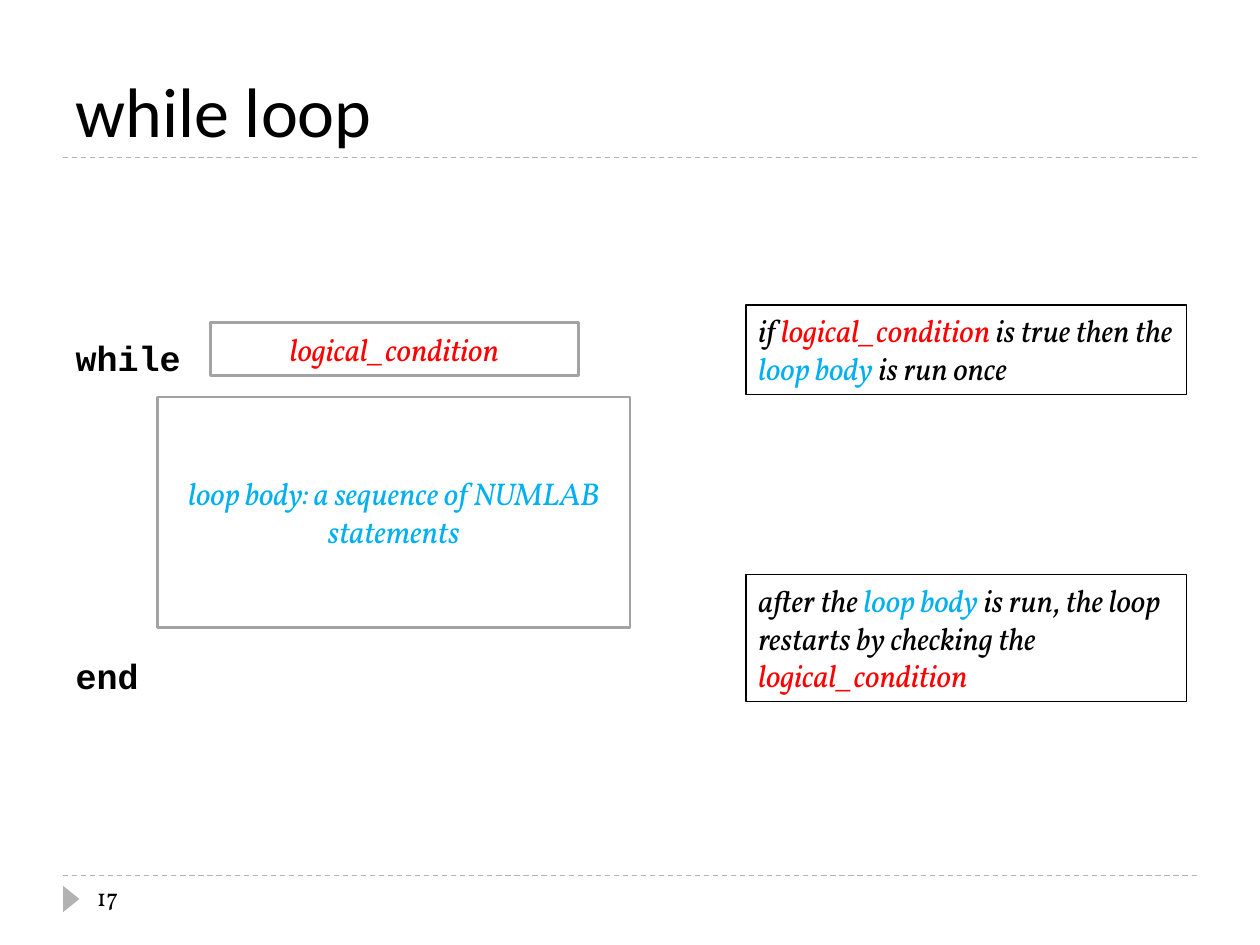
import pptx
import pptx.util
import pptx.dml.color
import pptx.enum.dml
import pptx.enum.shapes
import pptx.enum.text
import pptx.oxml
import pptx.oxml.ns
from pptx.util import Inches

COLORS = {"black": "000000", "condition": "FF0000", "body": "00B0F0",
          "frame": "A3A3A3", "rule": "B2B2B2"}
TITLE = "while loop"
KEYWORDS = [("while", 0), ("end", 158)]
PAGE_NUMBER = "17"
RULE_HEIGHTS = [1.25, 6.95]
CODE_PARTS = [
    ((1.25, 3.15, 3.75, 1.83), [("loop body: a sequence of NUMLAB statements", "body")]),
    ((1.67, 2.56, 2.92, 0.42), [("logical_condition", "condition")]),
]
EXPLANATIONS = [
    ((5.92, 2.42, 3.5, 0.71),
     [("if ", "black"), ("logical_condition", "condition"),
      (" is true then the ", "black"), ("loop body", "body"),
      (" is run once", "black")]),
    ((5.92, 4.56, 3.5, 1.01),
     [("after the ", "black"), ("loop body", "body"),
      (" is run, the loop restarts by checking the ", "black"),
      ("logical_condition", "condition")]),
]

ALIGN = pptx.enum.text.PP_ALIGN
ANCHOR = pptx.enum.text.MSO_ANCHOR
AUTO_SIZE = pptx.enum.text.MSO_AUTO_SIZE
SHAPE = pptx.enum.shapes.MSO_SHAPE


def rgb(name):
    return pptx.dml.color.RGBColor.from_string(COLORS[name])


def style(run, font, size, color="black", bold=False, italic=False):
    run.font.name = font
    run.font.size = pptx.util.Pt(size)
    run.font.color.rgb = rgb(color)
    run.font.bold = bold
    run.font.italic = italic


def place(part, box):
    part.left, part.top, part.width, part.height = map(Inches, box)


def add_rule(slide, height):
    rule = slide.shapes.add_connector(
        pptx.enum.shapes.MSO_CONNECTOR.STRAIGHT,
        Inches(0.5), Inches(height), Inches(9.5), Inches(height))
    rule.line.color.rgb = rgb("rule")
    rule.line.width = pptx.util.Pt(0.75)
    rule.line.dash_style = pptx.enum.dml.MSO_LINE.DASH
    properties = rule.line._get_or_add_ln().getparent()
    properties.append(pptx.oxml.parse_xml(
        "<a:effectLst %s/>" % pptx.oxml.ns.nsdecls("a")))


def add_frame(slide, box, phrases, color, width, align, anchor, auto_size):
    frame = slide.shapes.add_shape(SHAPE.RECTANGLE, *map(Inches, box))
    frame.shadow.inherit = False
    frame.fill.background()
    frame.line.color.rgb = rgb(color)
    frame.line.width = pptx.util.Pt(width)
    text = frame.text_frame
    text.word_wrap = True
    text.vertical_anchor = anchor
    text.auto_size = auto_size
    paragraph = text.paragraphs[0]
    paragraph.alignment = align
    for phrase, phrase_color in phrases:
        run = paragraph.add_run()
        run.text = phrase
        style(run, "Vollkorn", 18, phrase_color, italic=True)


def add_title(slide):
    title = slide.shapes.title
    place(title, (0.5, 0.17, 9, 1.08))
    title.text_frame.text = TITLE
    title.text_frame.vertical_anchor = ANCHOR.BOTTOM
    title.text_frame.auto_size = AUTO_SIZE.NONE
    heading = title.text_frame.paragraphs[0]
    heading.alignment = ALIGN.LEFT
    style(heading.runs[0], "Calibri", 40)


def add_keywords(slide):
    code = slide.placeholders[1]
    place(code, (0.5, 1.33, 9, 5.4))
    text = code.text_frame
    text.text = "\n".join(word for word, _ in KEYWORDS)
    text.auto_size = AUTO_SIZE.NONE
    text.vertical_anchor = ANCHOR.TOP
    text.margin_top = Inches(1.34)
    for paragraph, (_, gap) in zip(text.paragraphs, KEYWORDS):
        paragraph.space_before = pptx.util.Pt(gap)
        properties = paragraph._p.get_or_add_pPr()
        properties.set("marL", "0")
        properties.set("indent", "0")
        properties.append(pptx.oxml.parse_xml(
            "<a:buNone %s/>" % pptx.oxml.ns.nsdecls("a")))
        style(paragraph.runs[0], "Courier New", 20, bold=True)


def add_footer(slide):
    marker = slide.shapes.add_shape(
        SHAPE.ISOSCELES_TRIANGLE, *map(Inches, (0.46, 7.07, 0.21, 0.13)))
    marker.rotation = 90
    marker.shadow.inherit = False
    marker.fill.solid()
    marker.fill.fore_color.rgb = rgb("rule")
    marker.line.fill.background()
    number = slide.shapes.add_textbox(*map(Inches, (0.67, 6.95, 2.17, 0.4)))
    number.text_frame.word_wrap = True
    number.text_frame.text = PAGE_NUMBER
    style(number.text_frame.paragraphs[0].runs[0], "Vollkorn", 14)


def main():
    deck = pptx.Presentation()
    deck.slide_width, deck.slide_height = Inches(10), Inches(7.5)
    slide = deck.slides.add_slide(deck.slide_layouts[1])
    add_title(slide)
    add_keywords(slide)
    for height in RULE_HEIGHTS:
        add_rule(slide, height)
    add_footer(slide)
    for box, phrases in CODE_PARTS:
        add_frame(slide, box, phrases, "frame", 1.5,
                  ALIGN.CENTER, ANCHOR.MIDDLE, AUTO_SIZE.NONE)
    for box, phrases in EXPLANATIONS:
        add_frame(slide, box, phrases, "black", 0.75,
                  ALIGN.LEFT, ANCHOR.TOP, AUTO_SIZE.SHAPE_TO_FIT_TEXT)
    deck.save("out.pptx")


if __name__ == "__main__":
    main()
